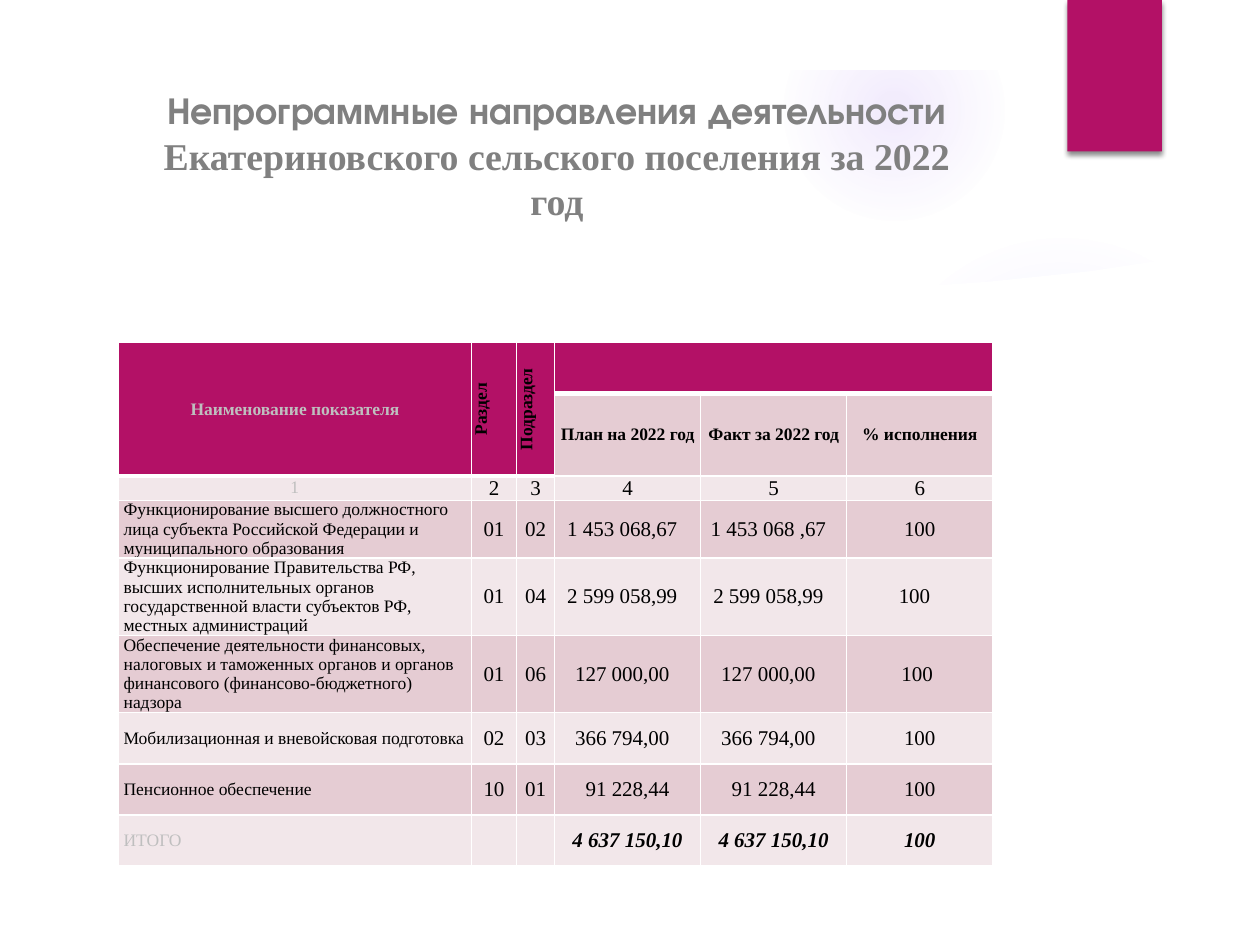
from lxml import etree
from pptx import Presentation
from pptx import util as u
from pptx.dml.color import RGBColor
from pptx.enum import shapes, text
from pptx.oxml import parse_xml
from pptx.oxml.ns import nsdecls, qn

COLORS = {
    "accent": "B31166", "dark_band": "E5CCD3", "light_band": "F2E7EA",
    "white": "FFFFFF", "black": "000000", "title": "808080",
    "muted": "BFBFBF", "glow": "9B6BF2",
}
SERIF = "Times New Roman"
DISPLAY = "TeX Gyre Adventor"
CENTER = text.PP_ALIGN.CENTER
LEFT = text.PP_ALIGN.LEFT

COLUMNS = [201.6, 26, 21.6, 83.5, 83.5, 83.5]
ROWS = [29.2, 46.5, 14, 33, 44, 44, 29.2, 29.2, 29.2]
HEADINGS = ["План на 2022 год", "Факт за 2022 год", "% исполнения"]
# Name, section, subsection, plan, fact, percent, extra right insets of the last three
SPENDING = [
    ("Функционирование высшего должностного лица субъекта Российской Федерации "
     "и муниципального образования",
     "01", "02", "1 453 068,67", "1 453 068 ,67", "100", (6, 6, 0)),
    ("Функционирование Правительства РФ, высших исполнительных органов "
     "государственной власти субъектов РФ, местных администраций",
     "01", "04", "2 599 058,99", "2 599 058,99", "100", (6, 6, 6)),
    ("Обеспечение деятельности финансовых, налоговых и таможенных органов "
     "и органов финансового (финансово-бюджетного) надзора",
     "01", "06", "127 000,00", "127 000,00", "100", (6, 6, 3)),
    ("Мобилизационная и вневойсковая подготовка",
     "02", "03", "366 794,00", "366 794,00", "100", (6, 6, 0)),
    ("Пенсионное обеспечение",
     "10", "01", "91 228,44", "91 228,44", "100", (0, 0, 0)),
]
TOTALS = ["4 637 150,10", "4 637 150,10", "100"]

PANEL = [(38, 146), (38, 503), (682, 503), (682, 146), (623, 155), (565, 161),
         (507, 165), (450, 168), (395, 168.5), (341, 168.5), (291, 168),
         (243, 165.5), (199, 163), (160, 160), (125, 156), (71, 150.5)]
STREAK = [(503, 168.5), (560, 166), (620, 158), (688, 150), (685, 125),
          (643, 138), (600, 148), (560, 157), (520, 163), (501, 165)]
OUTER_EDGE = [(0, 0), (0, 540), (720, 540), (720, 0)]
INNER_EDGE = [(680.5, 500.5), (40, 500.5), (40, 40), (680.5, 40)]


class SlidePainter:
    def __init__(self, page):
        self.page = page

    def color(self, name):
        return RGBColor.from_string(COLORS[name])

    def paint(self, shape, fill):
        shape.shadow.inherit = False
        shape.line.fill.background()
        shape.fill.solid()
        shape.fill.fore_color.rgb = self.color(fill)

    def glow(self, left, top, size, stops):
        """Add a circle that fades outwards; stops are (position, opacity) in percent."""
        circle = self.page.shapes.add_shape(
            shapes.MSO_SHAPE.OVAL, u.Pt(left), u.Pt(top), u.Pt(size), u.Pt(size))
        self.paint(circle, "glow")
        marks = "".join(
            f'<a:gs pos="{place * 1000}"><a:srgbClr val="{COLORS["glow"]}">'
            f'<a:alpha val="{opacity * 1000}"/></a:srgbClr></a:gs>'
            for place, opacity in stops)
        gradient = parse_xml(
            f'<a:gradFill {nsdecls("a")}><a:gsLst>{marks}</a:gsLst>'
            '<a:path path="circle"><a:fillToRect l="50000" t="50000" r="50000" b="50000"/>'
            '</a:path></a:gradFill>')
        properties = circle.element.spPr
        properties.replace(properties.find(qn("a:solidFill")), gradient)

    def outline(self, *contours, opacity=100):
        """Add a white shape bounded by one or more closed contours."""
        scale = u.Pt(1)
        builder = self.page.shapes.build_freeform(*contours[0][0], scale=scale)
        builder.add_line_segments(contours[0][1:], close=True)
        for contour in contours[1:]:
            builder.move_to(*contour[0])
            builder.add_line_segments(contour[1:], close=True)
        shape = builder.convert_to_shape()
        self.paint(shape, "white")
        if opacity < 100:
            tone = shape.element.spPr.find(qn("a:solidFill"))[0]
            etree.SubElement(tone, qn("a:alpha")).set("val", str(opacity * 1000))

    def tab(self, left, top, width, height):
        """Add the accent block with its soft shadow."""
        block = self.page.shapes.add_shape(
            shapes.MSO_SHAPE.RECTANGLE, u.Pt(left), u.Pt(top), u.Pt(width), u.Pt(height))
        self.paint(block, "accent")
        effects = block.element.spPr.find(qn("a:effectLst"))
        effects.append(parse_xml(
            f'<a:outerShdw {nsdecls("a")} blurRad="{u.Pt(3)}" dist="{u.Pt(2)}" '
            f'dir="5400000" rotWithShape="0"><a:srgbClr val="{COLORS["black"]}">'
            '<a:alpha val="45000"/></a:srgbClr></a:outerShdw>'))

    def add_span(self, para, words, size, color, font=SERIF, bold=False, italic=False):
        span = para.add_run()
        span.text = words
        span.font.name = font
        span.font.size = u.Pt(size)
        span.font.bold = bold
        span.font.italic = italic
        span.font.color.rgb = self.color(color)

    def title(self, left, top, width, height, spans):
        box = self.page.shapes.title
        box.left, box.top = u.Pt(left), u.Pt(top)
        box.width, box.height = u.Pt(width), u.Pt(height)
        frame = box.text_frame
        frame.word_wrap = True
        frame.auto_size = text.MSO_AUTO_SIZE.NONE
        frame.vertical_anchor = text.MSO_ANCHOR.MIDDLE
        frame.margin_bottom = u.Pt(28)
        para = frame.paragraphs[0]
        para.alignment = CENTER
        para.line_spacing = 1.0
        for words, font in spans:
            self.add_span(para, words, 21.6, "title", font, bold=True)

    def table(self, left, top, columns, rows):
        grid = self.page.shapes.add_table(
            len(rows), len(columns), u.Pt(left), u.Pt(top),
            u.Pt(sum(columns)), u.Pt(sum(rows))).table
        for column, width in zip(grid.columns, columns):
            column.width = u.Pt(width)
        for row, height in zip(grid.rows, rows):
            row.height = u.Pt(height)
        return grid

    def band(self, cell, fill, bottom=1):
        """Give a cell its fill, white borders and insets."""
        properties = cell._tc.get_or_add_tcPr()
        for side, width in zip("LRTB", (1, 1, 1, bottom)):
            properties.append(parse_xml(
                f'<a:ln{side} {nsdecls("a")} w="{u.Pt(width)}"><a:solidFill>'
                f'<a:srgbClr val="{COLORS["white"]}"/></a:solidFill></a:ln{side}>'))
        cell.fill.solid()
        cell.fill.fore_color.rgb = self.color(fill)
        cell.vertical_anchor = text.MSO_ANCHOR.MIDDLE
        cell.margin_left = cell.margin_right = u.Pt(3)
        cell.margin_top = cell.margin_bottom = 0

    def entry(self, cell, words, size=12, color="black", align=CENTER, inset=3, **style):
        cell.margin_right = u.Pt(inset)
        para = cell.text_frame.paragraphs[0]
        para.alignment = align
        self.add_span(para, words, size, color, **style)


def fill_table(painter):
    grid = painter.table(67.7, 195.8, COLUMNS, ROWS)
    for row in range(len(ROWS)):
        for column in range(len(COLUMNS)):
            header = row == 0 or (row == 1 and column < 3)
            fill = "accent" if header else "dark_band" if row % 2 else "light_band"
            painter.band(grid.cell(row, column), fill, 3 if header else 1)

    for column, words in enumerate(["Наименование показателя", "Раздел", "Подраздел"]):
        cell = grid.cell(0, column)
        cell.merge(grid.cell(1, column))
        painter.entry(cell, words, 10, "black" if column else "muted", bold=True)
        if column:
            cell._tc.get_or_add_tcPr().set("vert", "vert270")
    grid.cell(0, 3).merge(grid.cell(0, 5))
    for column, words in enumerate(HEADINGS, 3):
        cell = grid.cell(1, column)
        cell.margin_left = u.Pt(0.7)
        painter.entry(cell, words, 10, inset=0.7, bold=True)

    painter.entry(grid.cell(2, 0), "1", 10, "muted")
    for column in range(1, 6):
        painter.entry(grid.cell(2, column), str(column + 1))
    for row, (name, *values, insets) in enumerate(SPENDING, 3):
        painter.entry(grid.cell(row, 0), name, 10, align=LEFT)
        for column, (value, extra) in enumerate(zip(values, (0, 0, *insets)), 1):
            painter.entry(grid.cell(row, column), value, inset=3 + extra)
    painter.entry(grid.cell(8, 0), "ИТОГО", 10, "muted", LEFT)
    for column, value in enumerate(TOTALS, 3):
        painter.entry(grid.cell(8, column), value, bold=True, italic=True)


def main():
    deck = Presentation()
    deck.slide_width, deck.slide_height = u.Pt(720), u.Pt(540)
    painter = SlidePainter(deck.slides.add_slide(deck.slide_layouts[5]))
    title = painter.page.shapes.title.element
    painter.glow(496, 132, 222, [(0, 7), (36, 6), (69, 0)])
    painter.glow(448, 0, 126, [(0, 14), (36, 7), (73, 0)])
    painter.outline(STREAK, opacity=20)
    painter.outline(PANEL)
    painter.outline(OUTER_EDGE, INNER_EDGE)
    painter.tab(610, 0, 54, 86.5)
    title.getparent().append(title)
    painter.title(68.4, 72.7, 499.7, 56.2, [
        ("Непрограммные направления деятельности ", DISPLAY),
        ("Екатериновского сельского поселения за 2022 год", SERIF)])
    fill_table(painter)
    deck.save("out.pptx")


if __name__ == "__main__":
    main()
